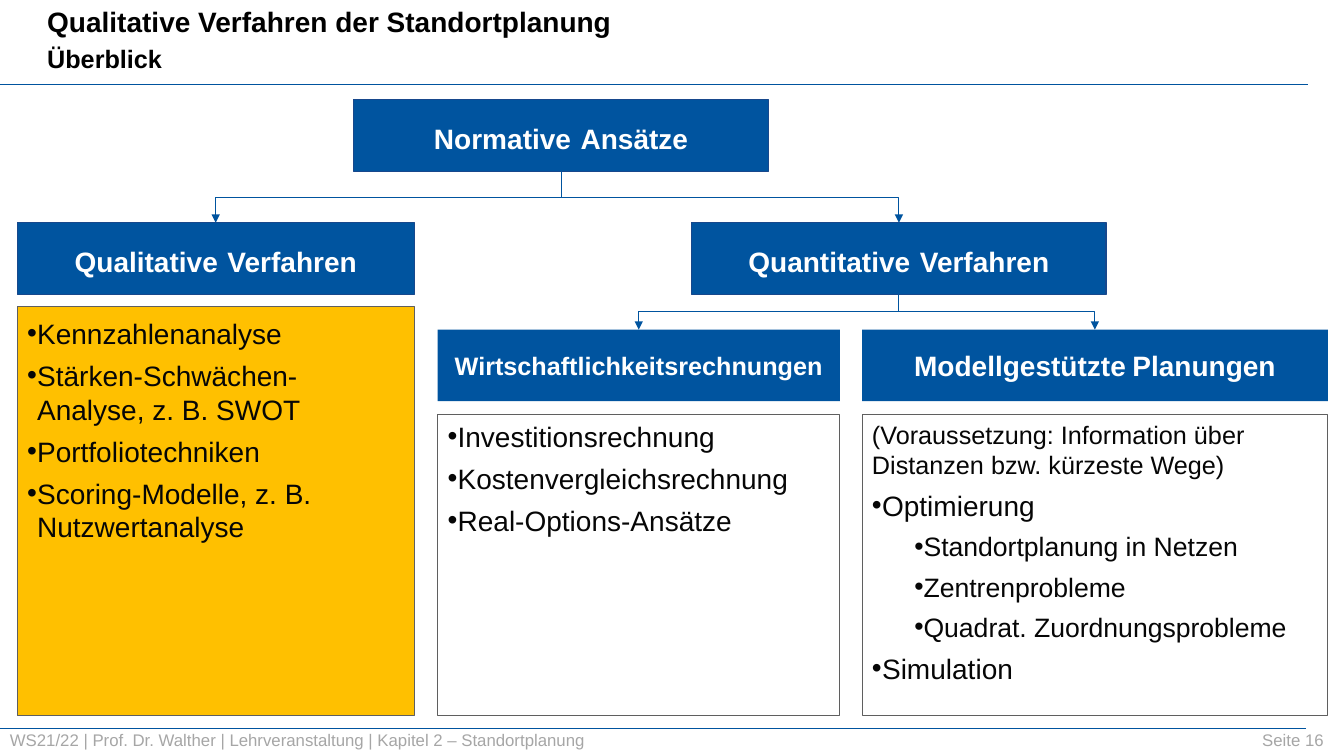
from dataclasses import dataclass

import pptx
import pptx.dml.color
import pptx.enum.shapes
import pptx.enum.text
import pptx.oxml
import pptx.oxml.ns
import pptx.util

Inches = pptx.util.Inches
Pt = pptx.util.Pt
Color = pptx.dml.color.RGBColor
Align = pptx.enum.text.PP_ALIGN
Anchor = pptx.enum.text.MSO_ANCHOR
Kind = pptx.enum.shapes.MSO_CONNECTOR
RECT = pptx.enum.shapes.MSO_SHAPE.RECTANGLE


@dataclass(frozen=True)
class Theme:
    face: str = "Arial"
    blue: str = "00549F"
    edge: str = "17488C"
    gold: str = "FFC000"
    gray: str = "5F5F5F"
    pale: str = "A6A6A6"
    ink: str = "060606"
    black: str = "000000"
    white: str = "FFFFFF"
    large: int = 20
    sub: int = 19
    mid: int = 18
    small: int = 12
    thin: float = 0.75
    rule: float = 1


@dataclass(frozen=True)
class Area:
    left: float
    top: float
    width: float
    height: float


@dataclass(frozen=True)
class Head:
    text: str
    area: Area
    edge: str | None = None
    size: int = 20
    gap: int = 24


@dataclass(frozen=True)
class Item:
    text: str
    size: int = 20
    left: float = 0.1
    hang: float = 0.1
    level: int = 0


@dataclass(frozen=True)
class Panel:
    area: Area
    items: tuple[Item, ...]
    fill: str | None = None
    inset: float = 0.05


@dataclass(frozen=True)
class Label:
    area: Area
    lines: tuple[tuple[str, int], ...]
    color: str
    bold: bool = False
    align: Align = Align.LEFT
    anchor: Anchor = Anchor.MIDDLE
    inset: tuple[float, float] = (0.1, 0.05)


THEME = Theme()

HEADS = {
    "root": Head("Normative Ansätze", Area(3.51, 0.99, 4.11, 0.71), THEME.edge),
    "qual": Head("Qualitative Verfahren", Area(0.17, 2.21, 3.94, 0.71), THEME.edge),
    "quant": Head("Quantitative Verfahren", Area(6.86, 2.21, 4.11, 0.71), THEME.edge),
    "cost": Head("Wirtschaftlichkeitsrechnungen", Area(4.34, 3.27, 3.99, 0.71), size=THEME.mid),
    "model": Head("Modellgestützte Planungen", Area(8.55, 3.27, 4.62, 0.71), gap=16),
}

LINKS = (("root", "qual"), ("root", "quant"), ("quant", "cost"), ("quant", "model"))

PANELS = (
    Panel(Area(0.17, 3.04, 3.94, 4.06), (
        Item("Kennzahlenanalyse"),
        Item("Stärken-Schwächen-Analyse, z. B. SWOT"),
        Item("Portfoliotechniken"),
        Item("Scoring-Modelle, z. B.\vNutzwertanalyse"),
    ), THEME.gold, 0.1),
    Panel(Area(4.34, 4.11, 3.99, 2.99), (
        Item("Investitionsrechnung"),
        Item("Kostenvergleichsrechnung"),
        Item("Real-Options-Ansätze"),
    )),
    Panel(Area(8.55, 4.11, 4.62, 2.99), (
        Item("(Voraussetzung: Information über Distanzen bzw. kürzeste Wege)", THEME.mid, 0, 0),
        Item("Optimierung"),
        *(Item(text, THEME.sub, 0.49, 0.07, 2) for text in (
            "Standortplanung in Netzen", "Zentrenprobleme", "Quadrat. Zuordnungsprobleme")),
        Item("Simulation"),
    )),
)

LABELS = (
    Label(Area(0.37, 0, 8.93, 0.8), (
        ("Qualitative Verfahren der Standortplanung", THEME.large),
        ("Überblick", THEME.mid),
    ), THEME.black, True, anchor=Anchor.TOP),
    Label(Area(0, 7.19, 10.24, 0.3), (
        ("WS21/22 | Prof. Dr. Walther | Lehrveranstaltung | Kapitel 2 – Standortplanung", THEME.small),
    ), THEME.pale),
    Label(Area(11.55, 7.24, 1.58, 0.2), (("Seite 16", THEME.small),), THEME.pale,
          align=Align.RIGHT, inset=(0, 0)),
)

RULES = ((0, 0.84, 12.97), (-0.02, 7.23, 12.95))


def place(area: Area) -> tuple[int, ...]:
    return tuple(Inches(n) for n in (area.left, area.top, area.width, area.height))


def style(font, size: int, color: str, bold: bool = False) -> None:
    font.name = THEME.face
    font.size = Pt(size)
    font.bold = bold
    font.color.rgb = Color.from_string(color)


def add_tag(parent, tag: str, **attrs: str) -> None:
    node = pptx.oxml.parse_xml(f"<{tag} {pptx.oxml.ns.nsdecls('a')}/>")
    for key, value in attrs.items():
        node.set(key, value)
    parent.append(node)


def stroke(line, color: str | None, width: float) -> None:
    if color is None:
        line.fill.background()
        return
    line.color.rgb = Color.from_string(color)
    line.width = Pt(width)


def add_box(slide, area: Area, fill: str | None, edge: str | None):
    box = slide.shapes.add_shape(RECT, *place(area))
    box.shadow.inherit = False
    if fill is None:
        box.fill.background()
    else:
        box.fill.solid()
        box.fill.fore_color.rgb = Color.from_string(fill)
    stroke(box.line, edge, THEME.thin)
    return box


def add_head(slide, head: Head):
    box = add_box(slide, head.area, THEME.blue, head.edge)
    box.text_frame.vertical_anchor = Anchor.MIDDLE
    para = box.text_frame.paragraphs[0]
    para.alignment = Align.CENTER
    for text in filter(None, head.text.partition(" ")):
        run = para.add_run()
        run.text = text
        style(run.font, head.gap if text == " " else head.size, THEME.white, True)
    return box


def add_panel(slide, panel: Panel) -> None:
    frame = add_box(slide, panel.area, panel.fill, THEME.gray).text_frame
    frame.vertical_anchor = Anchor.TOP
    frame.margin_top = Inches(panel.inset)
    for i, item in enumerate(panel.items):
        para = frame.add_paragraph() if i else frame.paragraphs[0]
        para.text = item.text
        para.alignment = Align.LEFT
        para.level = item.level
        para.space_after = Pt(6)
        if item.hang:
            props = para._p.get_or_add_pPr()
            props.set("marL", str(Inches(item.left)))
            props.set("indent", str(-Inches(item.hang)))
            add_tag(props, "a:buFont", typeface=THEME.face)
            add_tag(props, "a:buChar", char="•")
        style(para.font, item.size, THEME.ink)


def add_label(slide, label: Label) -> None:
    frame = slide.shapes.add_textbox(*place(label.area)).text_frame
    frame.word_wrap = True
    frame.vertical_anchor = label.anchor
    side, edge = (Inches(n) for n in label.inset)
    frame.margin_left = frame.margin_right = side
    frame.margin_top = frame.margin_bottom = edge
    for i, (text, size) in enumerate(label.lines):
        para = frame.add_paragraph() if i else frame.paragraphs[0]
        para.text = text
        para.alignment = label.align
        if i:
            para.space_before = Pt(3.6)
        style(para.font, size, label.color, label.bold)


def add_line(slide, kind: Kind, ends: tuple[int, ...], width: float):
    line = slide.shapes.add_connector(kind, *ends)
    stroke(line.line, THEME.blue, width)
    add_tag(line._element.spPr, "a:effectLst")
    return line


def add_link(slide, start, end) -> None:
    link = add_line(slide, Kind.ELBOW, (0, 0, 0, 0), THEME.thin)
    add_tag(link.line._get_or_add_ln(), "a:tailEnd", type="triangle")
    link.begin_connect(start, 2)
    link.end_connect(end, 0)
    x, y = (link.begin_x + link.end_x) // 2, (link.begin_y + link.end_y) // 2
    half, run = (link.end_y - link.begin_y) // 2, abs(link.end_x - link.begin_x) // 2
    side = 1 if link.end_x < link.begin_x else -1
    link.begin_x, link.begin_y = x - side * half, y - run
    link.end_x, link.end_y = x + side * half, y + run
    link.rotation = 90 if side > 0 else 270


def main() -> None:
    deck = pptx.Presentation()
    deck.slide_width, deck.slide_height = Inches(13.33), Inches(7.5)
    slide = deck.slides.add_slide(deck.slide_layouts[6])
    for left, top, right in RULES:
        add_line(slide, Kind.STRAIGHT, tuple(Inches(n) for n in (left, top, right, top)), THEME.rule)
    boxes = {key: add_head(slide, head) for key, head in HEADS.items()}
    for start, end in LINKS:
        add_link(slide, boxes[start], boxes[end])
    for panel in PANELS:
        add_panel(slide, panel)
    for label in LABELS:
        add_label(slide, label)
    deck.save("out.pptx")


if __name__ == "__main__":
    main()
